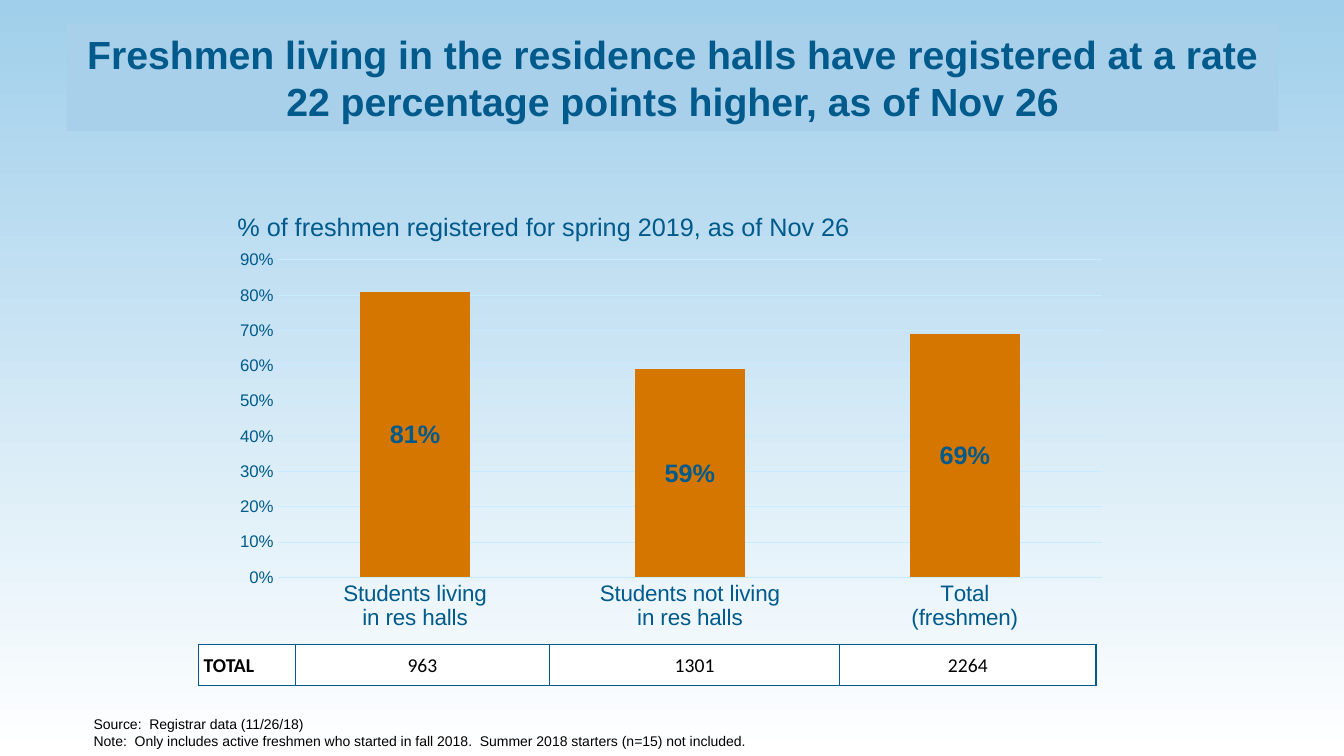
from dataclasses import dataclass

from lxml import etree
from pptx import Presentation
from pptx.chart.data import CategoryChartData
from pptx.dml.color import RGBColor
from pptx.enum import chart as charts, text
from pptx.oxml import ns
from pptx.util import Inches, Pt


@dataclass(frozen=True)
class Theme:
    sky: str = "A0CFEB"
    banner: str = "A9D0EA"
    navy: str = "005A8B"
    orange: str = "D47600"
    grid: str = "C7EBFF"
    white: str = "FFFFFF"
    black: str = "000000"
    sans: str = "Arial"
    table_font: str = "Calibri"
    title: int = 28
    chart_title: int = 18
    category: int = 16
    value: int = 12
    table: int = 14
    note: int = 10


THEME = Theme()
CATEGORIES = ["Students living\nin res halls", "Students not living\nin res halls", "Total\n(freshmen)"]
RATES = [0.81, 0.59, 0.69]
TOTALS = ["TOTAL", "963", "1301", "2264"]
TOTAL_WIDTHS = [0.96, 2.52, 2.88, 2.54]
NOTES = [
    "Source:  Registrar data (11/26/18)",
    "Note:  Only includes active freshmen who started in fall 2018.  Summer 2018 starters (n=15) not included.",
]


def rgb(value):
    return RGBColor.from_string(value)


def style_font(font, size, color, bold=False, name=THEME.sans):
    font.size, font.bold, font.name = Pt(size), bold, name
    font.color.rgb = rgb(color)


def add_span(para, words, size, color, bold=False, name=THEME.sans):
    span = para.add_run()
    span.text = words
    style_font(span.font, size, color, bold, name)


def fill_solid(target, color):
    target.fill.solid()
    target.fill.fore_color.rgb = rgb(color)


def paint_background(page):
    fill = page.background.fill
    fill.gradient()
    fill.gradient_angle = 270
    for stop, color in zip(fill.gradient_stops, (THEME.sky, THEME.white)):
        stop.color.rgb = rgb(color)


def add_title(page, words):
    box = page.shapes.title
    box.left, box.top, box.width, box.height = Inches(0.66), Inches(0.24), Inches(12.02), Inches(1.06)
    fill_solid(box, THEME.banner)
    frame = box.text_frame
    frame.word_wrap = True
    frame.auto_size = text.MSO_AUTO_SIZE.NONE
    frame.vertical_anchor = text.MSO_ANCHOR.MIDDLE
    para = frame.paragraphs[0]
    para.alignment = text.PP_ALIGN.CENTER
    add_span(para, words, THEME.title, THEME.navy, bold=True)


def add_notes_box(page):
    box = page.shapes.add_textbox(Inches(0.83), Inches(7.05), Inches(10.03), Inches(0.44))
    frame = box.text_frame
    frame.word_wrap = True
    for index, line in enumerate(NOTES):
        para = frame.add_paragraph() if index else frame.paragraphs[0]
        add_span(para, line, THEME.note, THEME.black)


def place_in_chart(element, index, **settings):
    for old in element.findall(ns.qn("c:layout")):
        element.remove(old)
    layout = etree.Element(ns.qn("c:layout"))
    manual = etree.SubElement(layout, ns.qn("c:manualLayout"))
    for tag, value in settings.items():
        etree.SubElement(manual, ns.qn(f"c:{tag}")).set("val", str(value))
    element.insert(index, layout)


def style_line(line, color):
    line.color.rgb = rgb(color)
    line.width = Pt(0.75)


def style_axes(chart):
    category, value = chart.category_axis, chart.value_axis
    for axis, size in ((category, THEME.category), (value, THEME.value)):
        axis.major_tick_mark = axis.minor_tick_mark = charts.XL_TICK_MARK.NONE
        style_font(axis.tick_labels.font, size, THEME.navy)
    style_line(category.format.line, THEME.grid)
    value.format.line.fill.background()
    value.minimum_scale, value.maximum_scale, value.major_unit = 0, 0.9, 0.1
    value.has_major_gridlines = True
    style_line(value.major_gridlines.format.line, THEME.grid)
    value.tick_labels.number_format = "0%"
    value.tick_labels.number_format_is_linked = False


def add_rate_chart(page):
    data = CategoryChartData(number_format="0%")
    data.categories = CATEGORIES
    data.add_series("Series 1", RATES)
    chart = page.shapes.add_chart(
        charts.XL_CHART_TYPE.COLUMN_STACKED,
        Inches(2.22), Inches(1.86), Inches(8.89), Inches(4.5), data,
    ).chart
    style_font(chart.font, THEME.note, THEME.navy)
    chart.has_legend = False
    chart.has_title = True
    title = chart.chart_title
    para = title.text_frame.paragraphs[0]
    add_span(para, "% of freshmen registered for spring 2019, as of Nov 26", THEME.chart_title, THEME.navy)
    title.include_in_layout = False
    place_in_chart(title.text_frame._txBody.getparent().getparent(), 1,
                   xMode="edge", yMode="edge", x=0.01, y=0.04)
    style_axes(chart)
    plot = chart.plots[0]
    plot.gap_width, plot.overlap, plot.vary_by_categories = 150, 100, False
    fill_solid(plot.series[0].format, THEME.orange)
    labels = plot.series[0].data_labels
    labels.show_value = True
    labels.number_format, labels.number_format_is_linked = "0%", False
    labels.position = charts.XL_LABEL_POSITION.CENTER
    style_font(labels.font, THEME.chart_title, THEME.navy, bold=True)
    place_in_chart(chart._chartSpace.find(".//" + ns.qn("c:plotArea")), 0, layoutTarget="inner",
                   xMode="edge", yMode="edge", x=0.06, y=0.16, w=0.92, h=0.7)


def add_borders(cell):
    properties = cell._tc.get_or_add_tcPr()
    for side in "LRTB":
        line = etree.SubElement(properties, ns.qn(f"a:ln{side}"), w=str(Pt(1)))
        fill = etree.SubElement(line, ns.qn("a:solidFill"))
        etree.SubElement(fill, ns.qn("a:srgbClr"), val=THEME.navy)


def add_totals_table(page):
    table = page.shapes.add_table(1, len(TOTALS), Inches(1.97), Inches(6.39), Inches(8.89), Inches(0.41)).table
    table.first_row = table.horz_banding = False
    for index, (words, width) in enumerate(zip(TOTALS, TOTAL_WIDTHS)):
        table.columns[index].width = Inches(width)
        cell = table.cell(0, index)
        heading = index == 0
        add_borders(cell)
        fill_solid(cell, THEME.white)
        cell.vertical_anchor = text.MSO_ANCHOR.MIDDLE
        cell.margin_left = Inches(0.05 if heading else 0.01)
        cell.margin_right = cell.margin_top = Inches(0.01)
        cell.margin_bottom = 0
        para = cell.text_frame.paragraphs[0]
        para.alignment = text.PP_ALIGN.LEFT if heading else text.PP_ALIGN.CENTER
        add_span(para, words, THEME.table, THEME.black, heading, THEME.table_font)


def main():
    deck = Presentation()
    deck.slide_width, deck.slide_height = Inches(13.33), Inches(7.5)
    page = deck.slides.add_slide(deck.slide_layouts.get_by_name("Title Only"))
    paint_background(page)
    add_notes_box(page)
    add_title(page, "Freshmen living in the residence halls have registered at a rate "
                    "22 percentage points higher, as of Nov 26")
    add_rate_chart(page)
    add_totals_table(page)
    deck.save("out.pptx")


if __name__ == "__main__":
    main()
